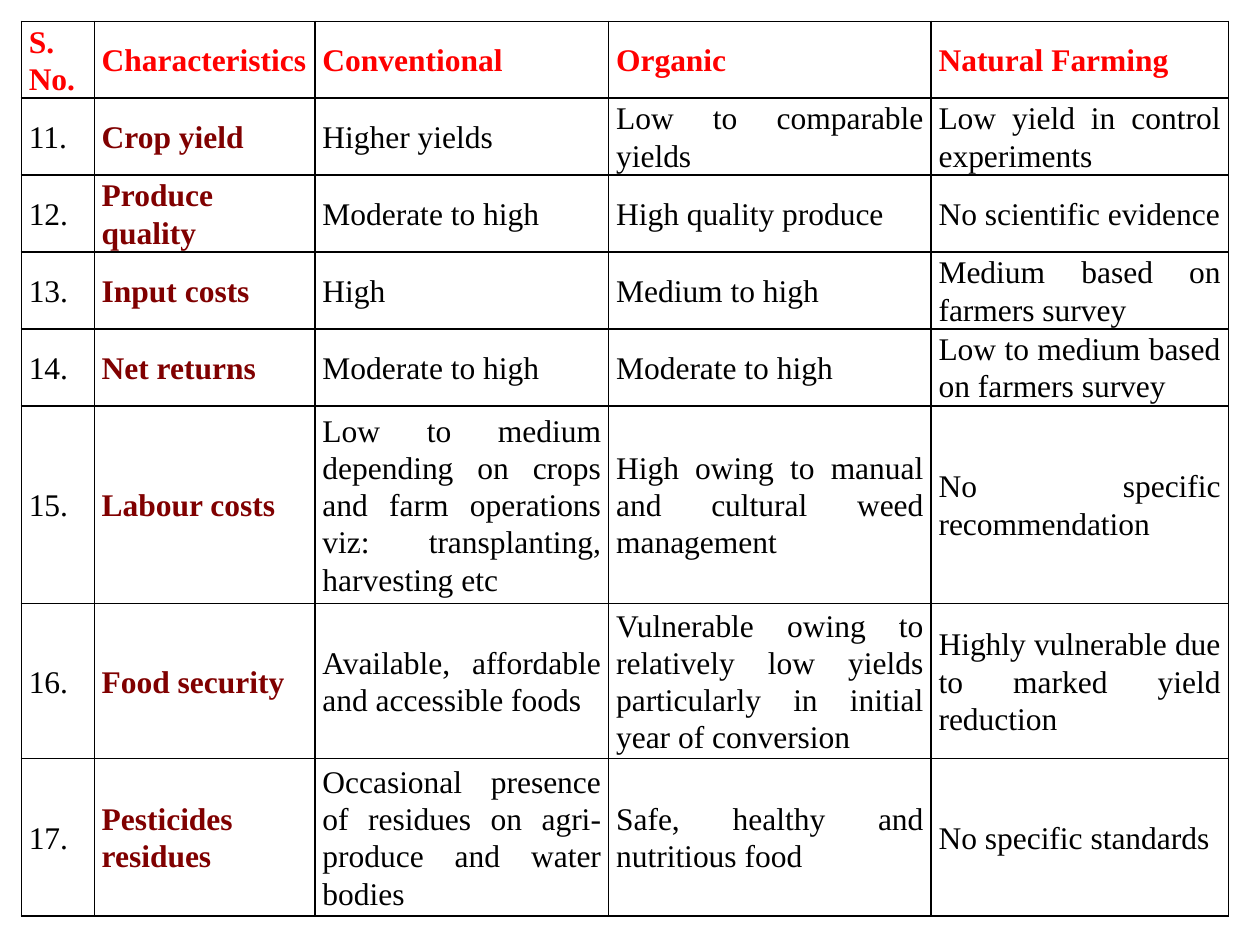
from typing import NamedTuple

from lxml import etree
from pptx import Presentation
from pptx.dml.color import RGBColor
from pptx.enum.text import MSO_ANCHOR, PP_ALIGN
from pptx.oxml.ns import qn
from pptx.util import Cm, Pt

MIDDLE = MSO_ANCHOR.MIDDLE
JUSTIFY = PP_ALIGN.JUSTIFY

RED = RGBColor(0xFF, 0x00, 0x00)
MAROON = RGBColor(0x80, 0x00, 0x00)
BLACK = RGBColor(0x00, 0x00, 0x00)

FONT = "Times New Roman"
SIDE_MARGIN = Cm(0.15)
COLUMN_WIDTHS = [Cm(w) for w in (1.47, 4.45, 5.92, 6.5, 5.99)]
ROW_HEIGHTS = [Cm(h) for h in [1.55] * 5 + [3.99, 3.12, 3.18]]
FIRST_NUMBER = 11


class Comparison(NamedTuple):
    characteristic: str
    conventional: str
    organic: str
    natural: str


HEADINGS = ("S. No.", "Characteristics", "Conventional", "Organic", "Natural Farming")
COMPARISONS = [
    Comparison("Crop yield", "Higher yields", "Low to comparable yields",
               "Low yield in control experiments"),
    Comparison("Produce quality", "Moderate to high", "High quality produce",
               "No scientific evidence"),
    Comparison("Input costs", "High", "Medium to high",
               "Medium based on farmers survey"),
    Comparison("Net returns", "Moderate to high", "Moderate to high",
               "Low to medium based on farmers survey"),
    Comparison("Labour costs",
               "Low to medium depending on crops and farm operations viz: "
               "transplanting, harvesting etc",
               "High owing to manual and cultural weed management",
               "No specific recommendation"),
    Comparison("Food security", "Available, affordable and accessible foods",
               "Vulnerable owing to relatively low yields particularly in "
               "initial year of conversion",
               "Highly vulnerable due to marked yield reduction"),
    Comparison("Pesticides residues",
               "Occasional presence of residues on agri-produce and water bodies",
               "Safe, healthy and nutritious food", "No specific standards"),
]


def add_borders(cell, color: RGBColor = BLACK, width: int = Pt(1)) -> None:
    """Draw a solid line on all four sides of a cell."""
    properties = cell._tc.get_or_add_tcPr()
    for position, side in enumerate(("a:lnL", "a:lnR", "a:lnT", "a:lnB")):
        line = etree.Element(qn(side), w=str(int(width)))
        fill = etree.SubElement(line, qn("a:solidFill"))
        etree.SubElement(fill, qn("a:srgbClr"), val=str(color))
        properties.insert(position, line)


def write_text(cell, text: str, *, color: RGBColor = BLACK, bold: bool = False) -> None:
    """Set the text of a cell with its format."""
    cell.vertical_anchor = MIDDLE
    cell.margin_left = cell.margin_right = SIDE_MARGIN
    cell.margin_top = cell.margin_bottom = 0
    paragraph = cell.text_frame.paragraphs[0]
    paragraph.alignment = JUSTIFY
    paragraph.line_spacing = 1.07
    paragraph.space_after = Pt(8)
    run = paragraph.add_run()
    run.text = text
    run.font.name = FONT
    run.font.size = Pt(18)
    run.font.bold = bold
    run.font.color.rgb = color


def main() -> None:
    presentation = Presentation()
    presentation.slide_width, presentation.slide_height = Cm(25.4), Cm(19.05)
    slide = presentation.slides.add_slide(presentation.slide_layouts[6])

    # Table grid
    farming = slide.shapes.add_table(
        len(ROW_HEIGHTS), len(COLUMN_WIDTHS), Cm(0.43), Cm(0.43),
        sum(COLUMN_WIDTHS), sum(ROW_HEIGHTS)).table
    farming.first_row = farming.horz_banding = False
    for column, width in zip(farming.columns, COLUMN_WIDTHS):
        column.width = width
    for row, height in zip(farming.rows, ROW_HEIGHTS):
        row.height = height
    for cell in farming.iter_cells():
        cell.fill.background()
        add_borders(cell)

    # Heading row
    for column, heading in enumerate(HEADINGS):
        write_text(farming.cell(0, column), heading, color=RED, bold=True)

    # Numbered comparisons
    for row, comparison in enumerate(COMPARISONS, start=1):
        write_text(farming.cell(row, 0), f"{FIRST_NUMBER + row - 1}.")
        write_text(farming.cell(row, 1), comparison.characteristic,
                   color=MAROON, bold=True)
        for column, finding in enumerate(comparison[1:], start=2):
            write_text(farming.cell(row, column), finding)

    presentation.save("out.pptx")


if __name__ == "__main__":
    main()
